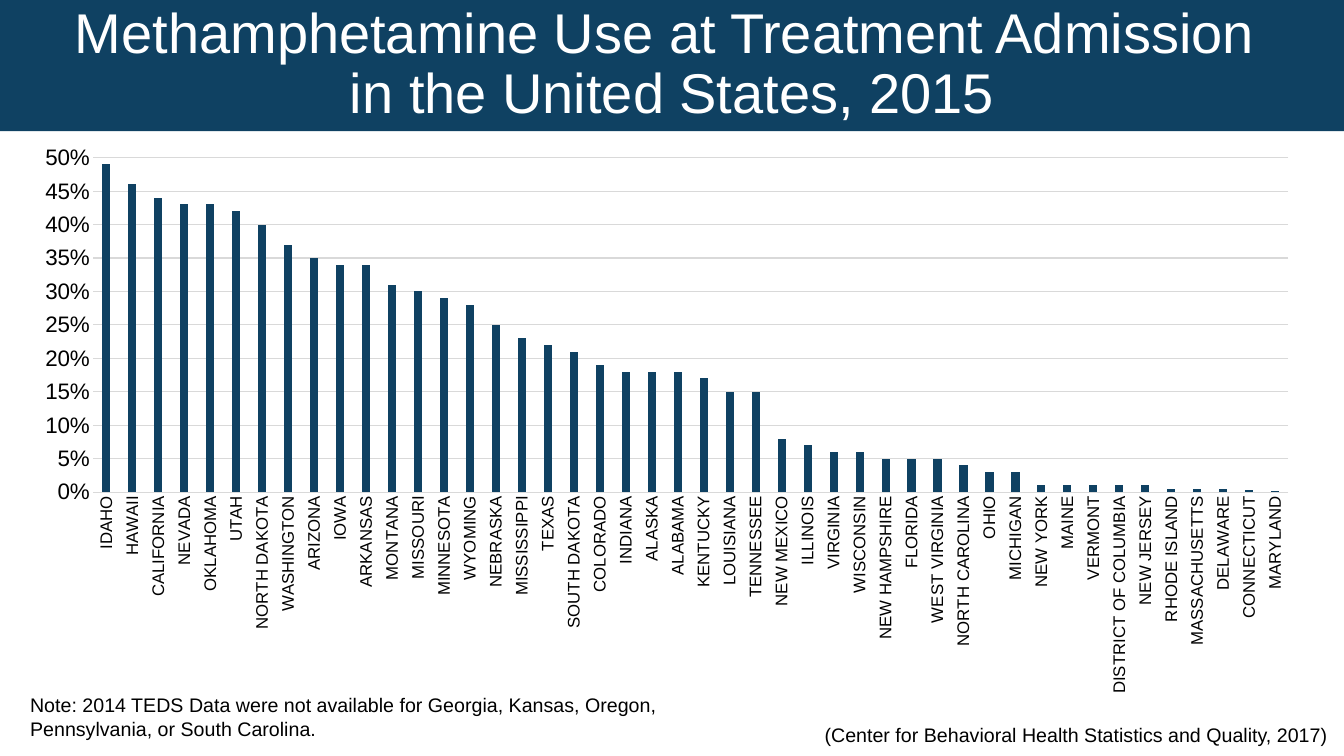
from dataclasses import dataclass

from lxml import etree
from pptx import Presentation
from pptx.chart import data as cd
from pptx.dml import color as dml
from pptx.enum import chart as ce, text as te
from pptx.oxml import ns
from pptx.util import Inches, Pt


@dataclass(frozen=True)
class Theme:
    navy: str = "0F4162"
    grid: str = "D9D9D9"
    ink: str = "000000"
    white: str = "FFFFFF"
    face: str = "Arial"
    head: int = 40
    scale: int = 16
    note: int = 14
    label: int = 12


THEME = Theme()

RATES = {
    "IDAHO": 0.49, "HAWAII": 0.46, "CALIFORNIA": 0.44, "NEVADA": 0.43,
    "OKLAHOMA": 0.43, "UTAH": 0.42, "NORTH DAKOTA": 0.4, "WASHINGTON": 0.37,
    "ARIZONA": 0.35, "IOWA": 0.34, "ARKANSAS": 0.34, "MONTANA": 0.31,
    "MISSOURI": 0.3, "MINNESOTA": 0.29, "WYOMING": 0.28, "NEBRASKA": 0.25,
    "MISSISSIPPI": 0.23, "TEXAS": 0.22, "SOUTH DAKOTA": 0.21, "COLORADO": 0.19,
    "INDIANA": 0.18, "ALASKA": 0.18, "ALABAMA": 0.18, "KENTUCKY": 0.17,
    "LOUISIANA": 0.15, "TENNESSEE": 0.15, "NEW MEXICO": 0.08, "ILLINOIS": 0.07,
    "VIRGINIA": 0.06, "WISCONSIN": 0.06, "NEW HAMPSHIRE": 0.05,
    "FLORIDA": 0.05, "WEST VIRGINIA": 0.05, "NORTH CAROLINA": 0.04,
    "OHIO": 0.03, "MICHIGAN": 0.03, "NEW YORK": 0.01, "MAINE": 0.01,
    "VERMONT": 0.01, "DISTRICT OF COLUMBIA": 0.01, "NEW JERSEY": 0.01,
    "RHODE ISLAND": 0.005, "MASSACHUSETTS": 0.005, "DELAWARE": 0.005,
    "CONNECTICUT": 0.003, "MARYLAND": 0.001,
}


def rgb(code):
    return dml.RGBColor.from_string(code)


def style(font, size, tint=THEME.ink):
    font.name = THEME.face
    font.size = Pt(size)
    font.color.rgb = rgb(tint)


def rule(line):
    """Give a chart line the thin grey of the grid."""
    line.color.rgb = rgb(THEME.grid)
    line.width = Pt(0.75)


def add_title(slide, box, lines):
    title = slide.shapes.title
    title.left, title.top, title.width, title.height = map(Inches, box)
    title.fill.solid()
    title.fill.fore_color.rgb = rgb(THEME.navy)
    frame = title.text_frame
    frame.word_wrap = True
    frame.auto_size = te.MSO_AUTO_SIZE.NONE
    frame.vertical_anchor = te.MSO_ANCHOR.MIDDLE
    para = frame.paragraphs[0]
    para.alignment = te.PP_ALIGN.CENTER
    para.line_spacing = 0.9
    for i, words in enumerate(lines):
        if i:
            para.add_line_break()
        run = para.add_run()
        run.text = words
        style(run.font, THEME.head, THEME.white)


def add_note(slide, box, words):
    frame = slide.shapes.add_textbox(*map(Inches, box)).text_frame
    frame.word_wrap = True
    run = frame.paragraphs[0].add_run()
    run.text = words
    style(run.font, THEME.note)


def set_plot(chart, box):
    """Fix the inner plot area, given as shares of the chart's box."""
    area = chart.plots[0]._element.getparent()
    for old in area.findall(ns.qn("c:layout")):
        area.remove(old)
    layout = etree.Element(ns.qn("c:layout"))
    manual = etree.SubElement(layout, ns.qn("c:manualLayout"))
    marks = [("layoutTarget", "inner"), ("xMode", "edge"), ("yMode", "edge")]
    for tag, val in marks + list(zip("xywh", box)):
        etree.SubElement(manual, ns.qn("c:" + tag)).set("val", str(val))
    area.insert(0, layout)


def add_bars(slide, box, rates):
    data = cd.CategoryChartData(number_format="0%")
    data.categories = list(rates)
    data.add_series("Series 1", list(rates.values()))
    kind = ce.XL_CHART_TYPE.COLUMN_CLUSTERED
    chart = slide.shapes.add_chart(kind, *map(Inches, box), data).chart
    chart.has_legend = False
    chart.has_title = False
    style(chart.font, THEME.label)
    set_plot(chart, (0.042, 0.041, 0.945, 0.579))

    plot = chart.plots[0]
    plot.vary_by_categories = False
    plot.gap_width = 219
    plot.overlap = -27
    fill = plot.series[0].format.fill
    fill.solid()
    fill.fore_color.rgb = rgb(THEME.navy)

    states, scale = chart.category_axis, chart.value_axis
    for axis, size in ((states, THEME.label), (scale, THEME.scale)):
        axis.major_tick_mark = axis.minor_tick_mark = ce.XL_TICK_MARK.NONE
        style(axis.tick_labels.font, size)
    rule(states.format.line)
    turn = states._element.find(ns.qn("c:txPr")).find(ns.qn("a:bodyPr"))
    turn.set("rot", "-5400000")
    turn.set("vert", "horz")

    scale.minimum_scale, scale.maximum_scale = 0, 0.5
    scale.major_unit = 0.05
    scale.tick_labels.number_format = "0%"
    scale.tick_labels.number_format_is_linked = False
    scale.format.line.fill.background()
    scale.has_major_gridlines = True
    rule(scale.major_gridlines.format.line)


def main():
    deck = Presentation()
    deck.slide_width, deck.slide_height = Inches(13.33), Inches(7.5)
    slide = deck.slides.add_slide(deck.slide_layouts[5])
    add_bars(slide, (0.4, 1.33, 12.54, 5.73), RATES)
    add_note(slide, (0.2, 6.83, 6.99, 0.57),
             "Note: 2014 TEDS Data were not available for Georgia, Kansas, "
             "Oregon, Pennsylvania, or South Carolina.")
    add_title(slide, (0, 0, 13.33, 1.3),
              ("Methamphetamine Use at Treatment Admission ",
               "in the United States, 2015"))
    add_note(slide, (8.08, 7.12, 5.69, 0.34),
             "(Center for Behavioral Health Statistics and Quality, 2017)")
    deck.save("out.pptx")


if __name__ == "__main__":
    main()
